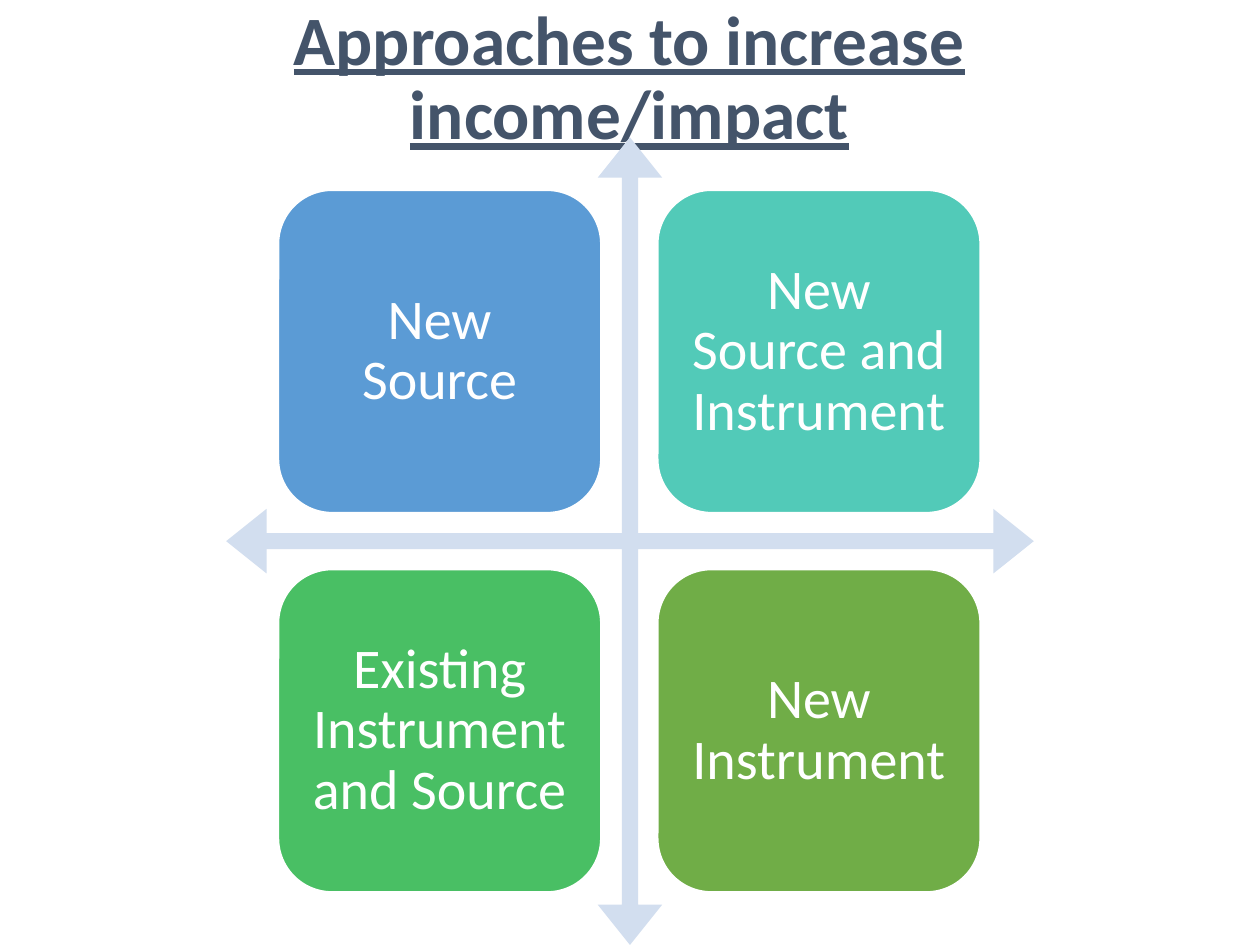
from pptx import Presentation
from pptx.dml.color import RGBColor
from pptx.enum.shapes import MSO_SHAPE
from pptx.enum.text import MSO_ANCHOR, MSO_AUTO_SIZE, PP_ALIGN
from pptx.util import Inches, Pt

QUAD_ARROW, ROUND_RECT = MSO_SHAPE.QUAD_ARROW, MSO_SHAPE.ROUNDED_RECTANGLE
MIDDLE, CENTER = MSO_ANCHOR.MIDDLE, PP_ALIGN.CENTER
NO_FIT = MSO_AUTO_SIZE.NONE

WHITE = RGBColor(0xFF, 0xFF, 0xFF)
SLATE = RGBColor(0x44, 0x54, 0x6A)
PALE_BLUE = RGBColor(0xD2, 0xDE, 0xEF)
BLUE = RGBColor(0x5B, 0x9B, 0xD5)
TEAL = RGBColor(0x52, 0xCA, 0xB8)
GREEN = RGBColor(0x49, 0xBF, 0x64)
OLIVE = RGBColor(0x70, 0xAD, 0x47)

ARROW_SIZE, ARROW_TOP = 6.41, 1.09
TILE, PITCH = 2.56, 3.01
GRID_LEFT, GRID_TOP = 2.21, 1.51
INSET = Inches(0.13)

TITLE_FONT = {"name": "Calibri", "size": Pt(39.6), "bold": True, "underline": True}
TILE_FONT = {"name": "Calibri", "size": Pt(32)}
TILES = [
    ("New Source", BLUE),
    ("New Source and Instrument", TEAL),
    ("Existing Instrument and Source", GREEN),
    ("New Instrument", OLIVE),
]


def write(sp, text, font, color):
    tf = sp.text_frame
    tf.word_wrap = True
    tf.auto_size = NO_FIT
    tf.vertical_anchor = MIDDLE
    p = tf.paragraphs[0]
    p.alignment = CENTER
    p.line_spacing = 0.9
    r = p.add_run()
    r.text = text
    for key, value in font.items():
        setattr(r.font, key, value)
    r.font.color.rgb = color


def add_filled(s, kind, left, top, size, color):
    sp = s.shapes.add_shape(kind, Inches(left), Inches(top), Inches(size), Inches(size))
    sp.shadow.inherit = False
    sp.fill.solid()
    sp.fill.fore_color.rgb = color
    return sp


prs = Presentation()
prs.slide_width, prs.slide_height = Inches(10), Inches(7.5)
s = prs.slides.add_slide(prs.slide_layouts[5])

title = s.shapes.title
title.left, title.top = Inches(0.47), Inches(0.29)
title.width, title.height = Inches(9.05), Inches(0.69)
write(title, "Approaches to increase income/impact", TITLE_FONT, SLATE)

arrow = add_filled(s, QUAD_ARROW, (10 - ARROW_SIZE) / 2, ARROW_TOP, ARROW_SIZE, PALE_BLUE)
arrow.line.fill.background()
for i, value in enumerate((0.02, 0.04, 0.05)):
    arrow.adjustments[i] = value

for i, (text, color) in enumerate(TILES):
    row, col = divmod(i, 2)
    sp = add_filled(s, ROUND_RECT, GRID_LEFT + col * PITCH, GRID_TOP + row * PITCH, TILE, color)
    sp.line.color.rgb = WHITE
    sp.line.width = Pt(1)
    for side in ("left", "top", "right", "bottom"):
        setattr(sp.text_frame, f"margin_{side}", INSET)
    write(sp, text, TILE_FONT, WHITE)

prs.save("out.pptx")
